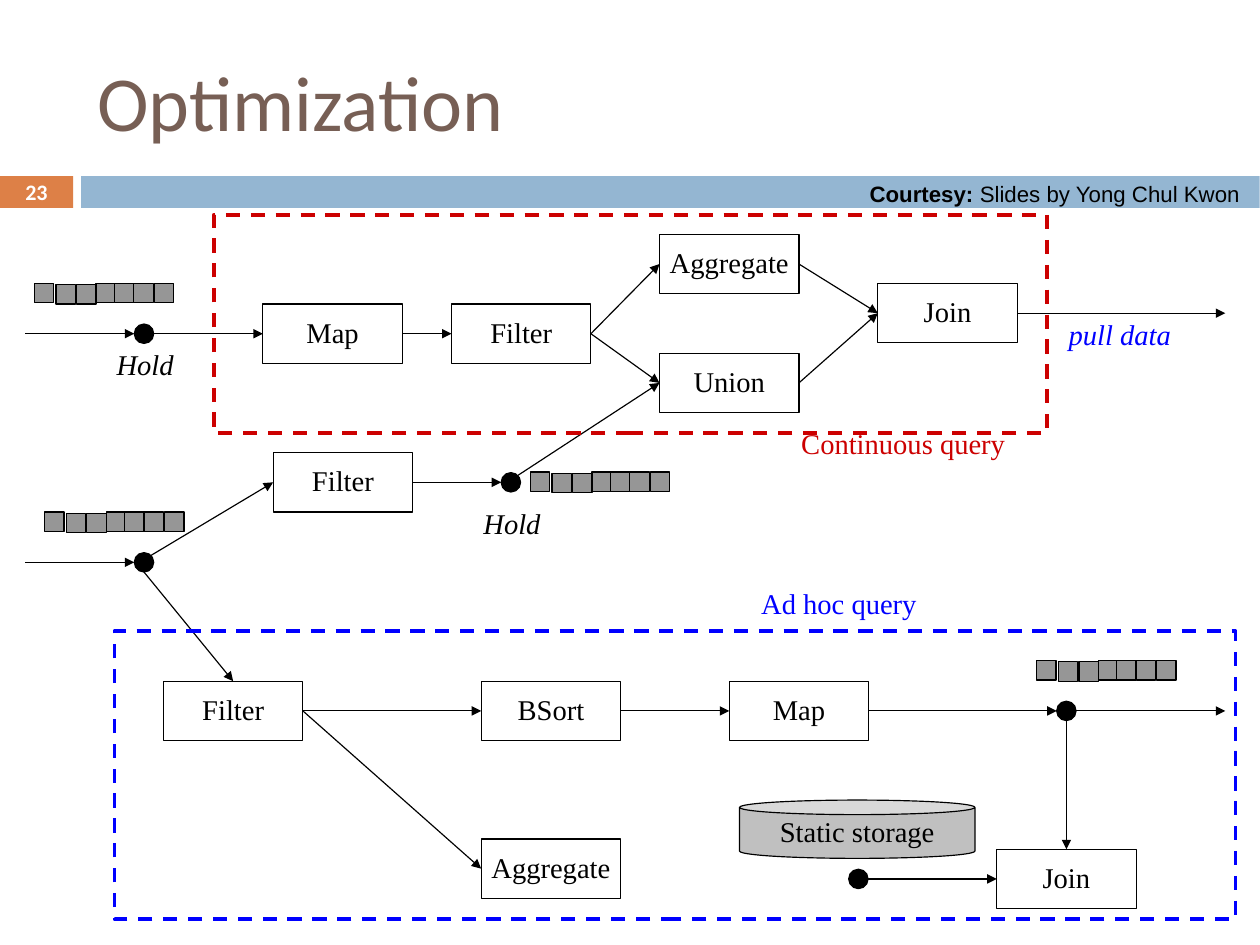
import math
from dataclasses import dataclass

import pptx
import pptx.dml.color
import pptx.enum.dml
import pptx.enum.shapes
import pptx.enum.text
import pptx.util
from lxml import etree
from pptx.oxml.ns import qn

Inches = pptx.util.Inches
Pt = pptx.util.Pt
SHAPE = pptx.enum.shapes.MSO_SHAPE
ANCHOR = pptx.enum.text.MSO_ANCHOR
ALIGN = pptx.enum.text.PP_ALIGN
AUTO = pptx.enum.text.MSO_AUTO_SIZE


@dataclass(frozen=True)
class Theme:
    black: str = "000000"
    white: str = "FFFFFF"
    brown: str = "775F55"
    orange: str = "DD8047"
    band: str = "94B6D2"
    red: str = "CC0000"
    blue: str = "0000FF"
    tuple_grey: str = "969696"
    storage_grey: str = "C0C0C0"
    heading: str = "Calibri"
    diagram: str = "Times New Roman"
    credit: str = "Arial"
    title_size: float = 49
    label_size: float = 18
    credit_size: float = 14
    number_size: float = 13.9
    thin: float = 0.75
    thick: float = 2.25


T = Theme()
BOX_W, BOX_H, DOT = 1.22, 0.52, 0.17
MARGINS = dict(margin_left=Inches(0.11), margin_right=Inches(0.11),
               margin_top=Inches(0.06), margin_bottom=Inches(0.06))
CENTRED = dict(MARGINS, vertical_anchor=ANCHOR.MIDDLE, word_wrap=False)
LABEL = dict(MARGINS, word_wrap=False, auto_size=AUTO.SHAPE_TO_FIT_TEXT)

# name: (text, left, top)
BOXES = {
    "map": ("Map", 2.3, 2.66),
    "filter": ("Filter", 3.95, 2.66),
    "aggregate": ("Aggregate", 5.77, 2.05),
    "union": ("Union", 5.77, 3.09),
    "join": ("Join", 7.68, 2.48),
    "shared filter": ("Filter", 2.39, 3.96),
    "adhoc filter": ("Filter", 1.43, 5.96),
    "bsort": ("BSort", 4.21, 5.96),
    "adhoc map": ("Map", 6.38, 5.96),
    "adhoc aggregate": ("Aggregate", 4.21, 7.34),
    "adhoc join": ("Join", 8.72, 7.43),
}
# name: centre
DOTS = {
    "input": (1.26, 2.92),
    "shared input": (1.26, 4.92),
    "hold": (4.47, 4.22),
    "output": (9.33, 6.22),
    "storage": (7.51, 7.69),
}
# An end is (box, side), (dot, angle clockwise from the right) or a point.
TOP, LEFT, RIGHT = 0, 1, 3
ARROWS = [
    ((0.22, 2.92), ("input", 180)),
    (("input", 0), ("map", LEFT)),
    (("map", RIGHT), ("filter", LEFT)),
    (("filter", RIGHT), ("aggregate", LEFT)),
    (("filter", RIGHT), ("union", LEFT)),
    (("aggregate", RIGHT), ("join", LEFT)),
    (("union", RIGHT), ("join", LEFT)),
    (("join", RIGHT), (10.72, 2.74)),
    ((0.22, 4.92), ("shared input", 180)),
    (("shared input", -45), ("shared filter", LEFT)),
    (("shared input", 90), ("adhoc filter", TOP)),
    (("shared filter", RIGHT), ("hold", 180)),
    (("hold", -45), ("union", LEFT)),
    (("adhoc filter", RIGHT), ("bsort", LEFT)),
    (("adhoc filter", RIGHT), ("adhoc aggregate", LEFT)),
    (("bsort", RIGHT), ("adhoc map", LEFT)),
    (("adhoc map", RIGHT), ("output", 180)),
    (("output", 0), (10.72, 6.22)),
    (("output", 90), ("adhoc join", TOP)),
    (("storage", 0), ("adhoc join", LEFT)),
]
QUEUES = [(0.39, 4.48), (4.64, 4.13), (0.3, 2.48), (9.07, 5.78)]
QUEUE_CELLS = [(0, 0), (0.19, 0.01), (0.37, 0.01), (0.54, 0),
               (0.7, 0), (0.87, 0), (1.05, 0)]
FRAMES = [((1.87, 1.88, 7.29, 1.91), T.red), ((1, 5.52, 9.81, 2.52), T.blue)]
LABELS = [
    ("Hold", (0.91, 3, 0.73, 0.39), T.black, True),
    ("Hold", (4.12, 4.39, 0.73, 0.39), T.black, True),
    ("pull data", (9.24, 2.74, 1.13, 0.39), T.blue, True),
    ("Continuous query", (6.9, 3.69, 2.02, 0.39), T.red, False),
    ("Ad hoc query", (6.55, 5.09, 1.6, 0.39), T.blue, False),
]


def rgb(value):
    return pptx.dml.color.RGBColor.from_string(value)


def apply(obj, values):
    for name, value in values.items():
        setattr(obj, name, value)


def write(sp, runs, frame, font=T.diagram, size=T.label_size, color=T.black,
          align=ALIGN.LEFT, spacing=0.93):
    """Fill a shape with one paragraph of (text, font flags) runs."""
    tf = sp.text_frame
    apply(tf, frame)
    p = tf.paragraphs[0]
    apply(p, dict(alignment=align, line_spacing=spacing))
    for text, flags in runs:
        r = p.add_run()
        r.text = text
        apply(r.font, dict(name=font, size=Pt(size), **flags))
        r.font.color.rgb = rgb(color)


def add_shape(shapes, kind, at, fill=None, line=None, width=T.thin):
    sp = shapes.add_shape(kind, *map(Inches, at))
    sp.shadow.inherit = False
    if fill:
        sp.fill.solid()
        sp.fill.fore_color.rgb = rgb(fill)
    else:
        sp.fill.background()
    if line:
        sp.line.color.rgb = rgb(line)
        sp.line.width = Pt(width)
    else:
        sp.line.fill.background()
    return sp


def add_text(s, at, runs, frame, **style):
    write(s.shapes.add_textbox(*map(Inches, at)), runs, frame, **style)


def add_box(s, text, left, top):
    sp = add_shape(s.shapes, SHAPE.RECTANGLE, (left, top, BOX_W, BOX_H), T.white, T.black)
    write(sp, [(text, {})], CENTRED, align=ALIGN.CENTER)
    return sp


def add_dot(s, x, y):
    add_shape(s.shapes, SHAPE.OVAL, (x - DOT / 2, y - DOT / 2, DOT, DOT), T.black, T.black)


def add_queue(s, left, top):
    group = s.shapes.add_group_shape()
    for dx, dy in QUEUE_CELLS:
        add_shape(group.shapes, SHAPE.RECTANGLE, (left + dx, top + dy, DOT, DOT),
                  T.tuple_grey, T.black)


def end_point(end):
    """Give the place of a free end or of an end on a dot's rim."""
    if end[0] not in DOTS:
        return end
    x, y = DOTS[end[0]]
    angle = math.radians(end[1])
    return x + DOT / 2 * math.cos(angle), y + DOT / 2 * math.sin(angle)


def add_arrow(s, boxes, start, end):
    points = [(0, 0) if e[0] in boxes else end_point(e) for e in (start, end)]
    c = s.shapes.add_connector(pptx.enum.shapes.MSO_CONNECTOR.STRAIGHT,
                               *(Inches(v) for point in points for v in point))
    for (name, site), connect in ((start, c.begin_connect), (end, c.end_connect)):
        if name in boxes:
            connect(boxes[name], site)
    c.line.color.rgb = rgb(T.black)
    c.line.width = Pt(T.thin)
    etree.SubElement(c.line._get_or_add_ln(), qn("a:tailEnd"), type="triangle")
    etree.SubElement(c._element.spPr, qn("a:effectLst"))


def add_header(s):
    add_shape(s.shapes, SHAPE.RECTANGLE, (0, 1.54, 0.64, 0.28), T.orange)
    add_shape(s.shapes, SHAPE.RECTANGLE, (0.71, 1.54, 10.31, 0.28), T.band)
    add_text(s, (0, 1.53, 0.64, 0.29), [("23", dict(bold=True))],
             dict(CENTRED, word_wrap=True), font=T.heading, size=T.number_size,
             color=T.white, align=ALIGN.CENTER, spacing=1)
    title = s.shapes.title
    apply(title, dict(left=Inches(0.74), top=Inches(0.28),
                      width=Inches(9.83), height=Inches(1.19)))
    write(title, [("Optimization", {})],
          dict(CENTRED, word_wrap=True, auto_size=AUTO.NONE),
          font=T.heading, size=T.title_size, color=T.brown, spacing=1)


def main():
    prs = pptx.Presentation()
    prs.slide_width = pptx.util.Cm(28)
    prs.slide_height = pptx.util.Cm(21)
    s = prs.slides.add_slide(prs.slide_layouts[5])
    add_header(s)
    boxes = {name: add_box(s, *box) for name, box in BOXES.items()}
    for centre in DOTS.values():
        add_dot(s, *centre)
    for start, end in ARROWS:
        add_arrow(s, boxes, start, end)
    for at, color in FRAMES:
        sp = add_shape(s.shapes, SHAPE.RECTANGLE, at, line=color, width=T.thick)
        sp.line.dash_style = pptx.enum.dml.MSO_LINE.DASH
    for text, at, color, italic in LABELS:
        add_text(s, at, [(text, dict(italic=italic))], LABEL, color=color)
    for corner in QUEUES:
        add_queue(s, *corner)
    storage = add_shape(s.shapes, SHAPE.CAN, (6.47, 7, 2.06, 0.51), T.storage_grey, T.black)
    storage.adjustments[0] = 0.25
    write(storage, [("Static storage", {})], CENTRED, align=ALIGN.CENTER)
    add_text(s, (7.51, 1.55, 3.5, 0.32),
             [("Courtesy: ", dict(bold=True)), ("Slides by Yong Chul Kwon", {})],
             dict(word_wrap=True, auto_size=AUTO.SHAPE_TO_FIT_TEXT),
             font=T.credit, size=T.credit_size)
    prs.save("out.pptx")


if __name__ == "__main__":
    main()
